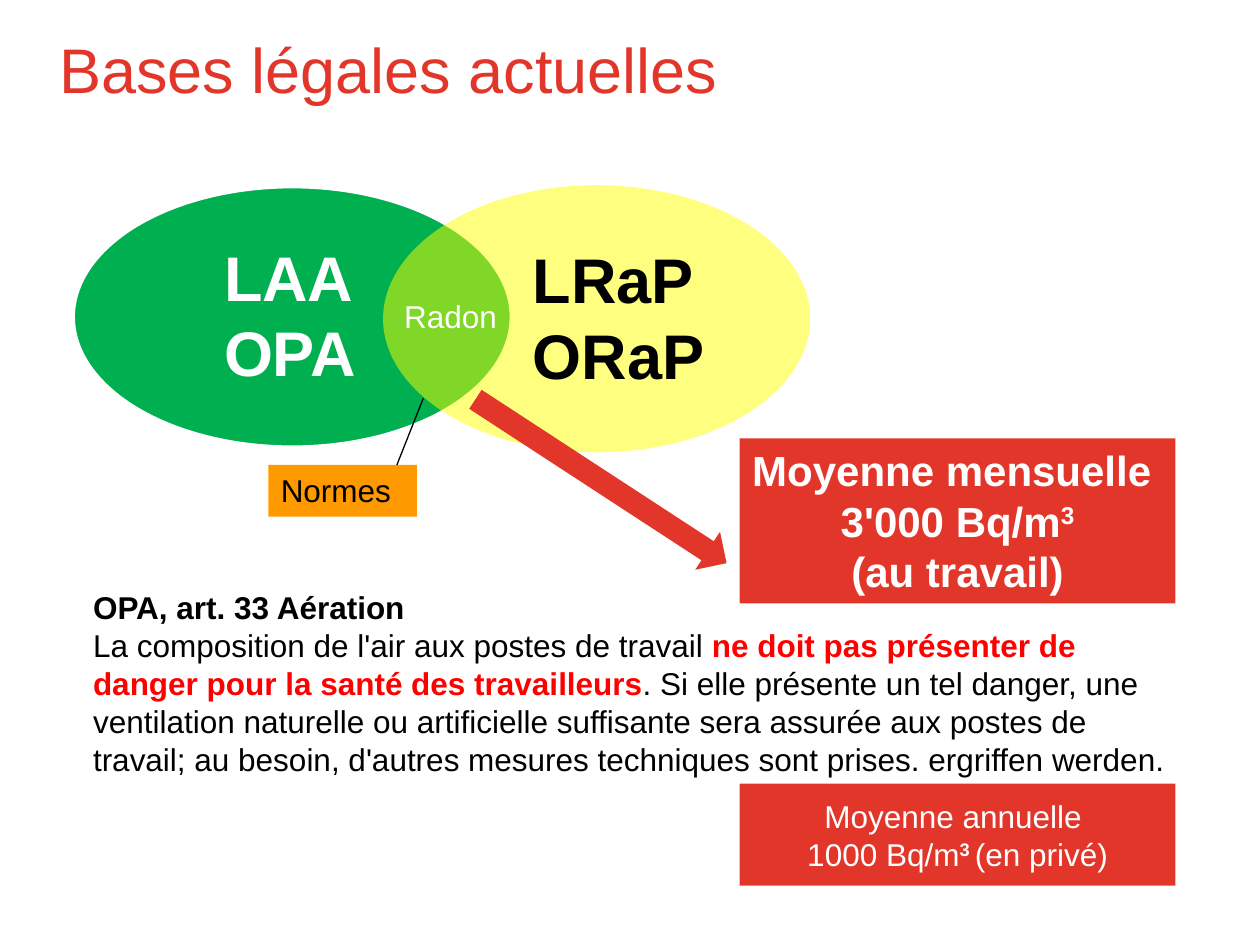
from lxml.etree import SubElement
from pptx import Presentation
from pptx.dml.color import RGBColor
from pptx.enum.shapes import MSO_CONNECTOR, MSO_SHAPE
from pptx.enum.text import MSO_ANCHOR, PP_ALIGN
from pptx.oxml.ns import qn
from pptx.util import Inches, Pt

COLORS = {"brand": "E3362B", "green": "00B050", "yellow": "FFFF00", "orange": "FF9900",
          "alert": "FF0000", "black": "000000", "white": "FFFFFF"}
TITLE = "Bases légales actuelles"
SWISS_LAWS = [["LAA\nOPA"]]
RADON_LAWS = [["LRaP\nORaP"]]
MONTHLY_LIMIT = [["Moyenne mensuelle "], ["3'000 Bq/m", ("3", {"raised": True})], ["(au travail)"]]
ANNUAL_LIMIT = [["Moyenne annuelle \n1000 Bq/m", ("3 ", {"raised": True, "bold": True}), "(en privé)"]]
ARTICLE = [
    [("OPA, art. 33 Aération", {"bold": True})],
    ["La composition de l'air aux postes de travail ",
     ("ne doit pas présenter de danger pour la santé des travailleurs", {"bold": True, "color": "alert"}),
     ". Si elle présente un tel danger, une ventilation naturelle ou artificielle suffisante sera "
     "assurée aux postes de travail; au besoin, d'autres mesures techniques sont prises. "
     "ergriffen werden."],
]


def color(name):
    return RGBColor.from_string(COLORS[name])


def write_span(para, text, size=18, color_name="black", bold=False, raised=False):
    for index, line in enumerate(text.split("\n")):
        if index:
            para.add_line_break()
        span = para.add_run()
        span.text = line
        span.font.name = "Arial"
        span.font.size = Pt(size)
        span.font.bold = bold
        span.font.color.rgb = color(color_name)
        if raised:
            span._r.get_or_add_rPr().set("baseline", "30000")


def write_text(box, paragraphs, size=18, color_name="black", bold=False,
               align=PP_ALIGN.LEFT, anchor=MSO_ANCHOR.TOP):
    """Fill a box with paragraphs made of strings or (string, format) pairs."""
    frame = box.text_frame
    frame.word_wrap = True
    frame.vertical_anchor = anchor
    for index, spans in enumerate(paragraphs):
        para = frame.add_paragraph() if index else frame.paragraphs[0]
        para.alignment = align
        for item in spans:
            text, extra = (item, {}) if isinstance(item, str) else item
            write_span(para, text, size, extra.get("color", color_name),
                       extra.get("bold", bold), extra.get("raised", False))


def add_shape(page, kind, place, fill, line=None, opacity=None):
    shape = page.shapes.add_shape(kind, *map(Inches, place))
    shape.shadow.inherit = False
    shape.fill.solid()
    shape.fill.fore_color.rgb = color(fill)
    if opacity:
        tint = shape.fill._xPr.find(qn("a:solidFill"))[0]
        SubElement(tint, qn("a:alpha")).set("val", str(opacity * 1000))
    if line:
        shape.line.color.rgb = color(line)
        shape.line.width = Pt(0.75)
    else:
        shape.line.fill.background()
    return shape


def add_label(page, place, paragraphs, fill=None, **style):
    if fill:
        box = add_shape(page, MSO_SHAPE.RECTANGLE, place, fill)
    else:
        box = page.shapes.add_textbox(*map(Inches, place))
    write_text(box, paragraphs, **style)


def add_title(page):
    title = page.shapes.title
    title.left, title.top, title.width, title.height = map(Inches, (0.43, 0.16, 9.21, 1.39))
    frame = title.text_frame
    frame.margin_left, frame.margin_top = Inches(0.04), Inches(0.08)
    frame.margin_right = frame.margin_bottom = 0
    write_text(title, [[TITLE]], size=36, color_name="brand")


def add_pointer(page, start, end):
    pointer = page.shapes.add_connector(MSO_CONNECTOR.STRAIGHT, *map(Inches, start + end))
    pointer.line.color.rgb = color("black")
    pointer.line.width = Pt(0.75)
    SubElement(pointer._element.spPr, qn("a:effectLst"))


def main():
    deck = Presentation()
    deck.slide_width, deck.slide_height = Inches(10), Inches(7.5)
    page = deck.slides.add_slide(deck.slide_layouts[5])
    add_title(page)

    law = {"size": 36, "bold": True}
    add_shape(page, MSO_SHAPE.OVAL, (0.59, 1.49, 3.46, 2.05), "green", line="white")
    add_label(page, (1.68, 1.84, 1.66, 1.3), SWISS_LAWS, fill="green", color_name="white", **law)
    add_shape(page, MSO_SHAPE.OVAL, (3.04, 1.47, 3.39, 2.12), "yellow", opacity=50)
    add_label(page, (4.13, 1.86, 1.77, 1.3), RADON_LAWS, **law)
    add_label(page, (3.11, 2.31, 1.02, 0.4), [["Radon"]], color_name="white")
    add_label(page, (2.13, 3.69, 1.18, 0.41), [["Normes"]], fill="orange")
    add_pointer(page, (3.15, 3.69), (3.36, 3.16))

    limit = {"fill": "brand", "color_name": "white", "align": PP_ALIGN.CENTER}
    add_label(page, (5.87, 3.48, 3.46, 1.31), MONTHLY_LIMIT, size=24, bold=True, **limit)
    arrow = add_shape(page, MSO_SHAPE.RIGHT_ARROW, (3.58, 3.64, 2.38, 0.36), "brand")
    arrow.rotation = 33.1
    add_label(page, (0.64, 4.62, 8.79, 1.62), ARTICLE)
    add_label(page, (5.87, 6.22, 3.46, 0.81), ANNUAL_LIMIT, anchor=MSO_ANCHOR.MIDDLE, **limit)
    deck.save("out.pptx")


if __name__ == "__main__":
    main()
